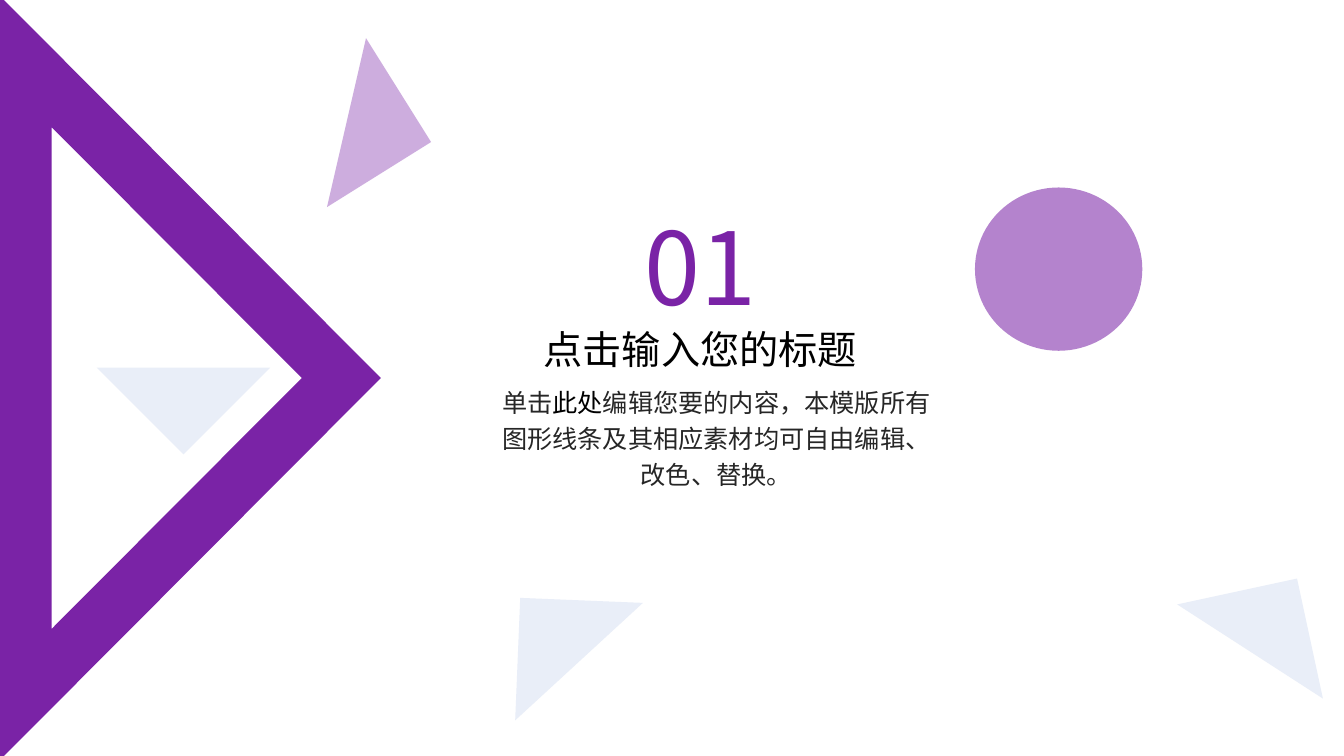
from dataclasses import dataclass
from typing import Optional

import lxml.etree
import pptx
import pptx.dml.color
import pptx.dml.fill
import pptx.enum.shapes
import pptx.enum.text
import pptx.oxml.ns
import pptx.shapes.base
import pptx.slide
import pptx.text.text
import pptx.util

Inches = pptx.util.Inches
Pt = pptx.util.Pt
qn = pptx.oxml.ns.qn


@dataclass(frozen=True)
class Theme:
    font: str = "Noto Sans CJK SC"
    purple: str = "7A23A6"
    indigo: str = "332D91"
    pale: str = "E9EEF8"
    black: str = "000000"
    body: str = "262626"
    number_size: int = 72
    title_size: int = 28
    body_size: int = 18
    outline_width: int = 40


THEME = Theme()


@dataclass(frozen=True)
class Triangle:
    """A triangle that points right before it is turned clockwise about its centre."""
    centre_x: float
    centre_y: float
    rotation: float
    outline: str
    outline_alpha: int = 100
    fill: Optional[str] = None
    fill_alpha: int = 100
    width: float = 0.19
    height: float = 0.38


FRAME = Triangle(1.81, 3.75, 0, THEME.purple, width=3.15, height=6.32)
ACCENTS = [
    Triangle(3.8, 1.3, 13, THEME.purple, 36),
    Triangle(5.49, 6.29, 227.4, THEME.pale, fill=THEME.indigo, fill_alpha=47),
    Triangle(1.82, 4.02, 90, THEME.pale, fill=THEME.purple, fill_alpha=56),
    Triangle(12.6, 6.15, 302.9, THEME.pale, fill=THEME.purple, fill_alpha=56),
]


def paint(fill: pptx.dml.fill.FillFormat, color: str, alpha: int, owner: lxml.etree.ElementBase) -> None:
    """Give a solid colour, with alpha in percent, to the fill held by owner."""
    fill.solid()
    fill.fore_color.rgb = pptx.dml.color.RGBColor.from_string(color)
    if alpha < 100:
        value = owner.find(qn("a:solidFill")).find(qn("a:srgbClr"))
        lxml.etree.SubElement(value, qn("a:alpha"), val=str(alpha * 1000))


def draw_triangle(slide: pptx.slide.Slide, triangle: Triangle) -> None:
    left = triangle.centre_x - triangle.width / 2
    top = triangle.centre_y - triangle.height / 2
    corners = [
        (Inches(left), Inches(top + triangle.height)),
        (Inches(left + triangle.width), Inches(triangle.centre_y)),
    ]
    builder = slide.shapes.build_freeform(Inches(left), Inches(top))
    builder.add_line_segments(corners, close=True)
    shape = builder.convert_to_shape()
    shape.rotation = triangle.rotation
    shape.shadow.inherit = False
    if triangle.fill:
        paint(shape.fill, triangle.fill, triangle.fill_alpha, shape.element.spPr)
    else:
        shape.fill.background()
    shape.line.width = Pt(THEME.outline_width)
    outline = shape.element.spPr.find(qn("a:ln"))
    paint(shape.line.fill, triangle.outline, triangle.outline_alpha, outline)
    lxml.etree.SubElement(outline, qn("a:miter"), lim="800000")


def draw_circle(slide: pptx.slide.Slide) -> None:
    circle = slide.shapes.add_shape(
        pptx.enum.shapes.MSO_SHAPE.OVAL, Inches(9.67), Inches(1.86), Inches(1.66), Inches(1.62)
    )
    circle.shadow.inherit = False
    paint(circle.fill, THEME.purple, 56, circle.element.spPr)
    circle.line.fill.background()


def add_text_frame(
    slide: pptx.slide.Slide, left: float, top: float, width: float, height: float
) -> pptx.text.text.TextFrame:
    box = slide.shapes.add_textbox(Inches(left), Inches(top), Inches(width), Inches(height))
    box.text_frame.word_wrap = True
    box.text_frame.auto_size = pptx.enum.text.MSO_AUTO_SIZE.SHAPE_TO_FIT_TEXT
    return box.text_frame


def style(paragraph: pptx.text.text._Paragraph, size: int, color: str) -> None:
    paragraph.alignment = pptx.enum.text.PP_ALIGN.CENTER
    paragraph.font.size = Pt(size)
    paragraph.font.name = THEME.font
    paragraph.font.color.rgb = pptx.dml.color.RGBColor.from_string(color)
    defaults = paragraph._p.pPr.find(qn("a:defRPr"))
    lxml.etree.SubElement(defaults, qn("a:ea"), typeface=THEME.font)


def write_heading(slide: pptx.slide.Slide) -> None:
    heading = add_text_frame(slide, 5.22, 1.98, 3.45, 1.78)
    number = heading.paragraphs[0]
    number.text = "01"
    style(number, THEME.number_size, THEME.purple)
    title = heading.add_paragraph()
    title.text = "点击输入您的标题"
    style(title, THEME.title_size, THEME.black)


def write_description(slide: pptx.slide.Slide) -> None:
    description = add_text_frame(slide, 4.77, 3.73, 4.67, 1.19).paragraphs[0]
    style(description, THEME.body_size, THEME.body)
    description.line_spacing = 1.2
    description.space_before = Pt(3.6)
    description.add_run().text = "单击"
    emphasis = description.add_run()
    emphasis.text = "此处"
    emphasis.font.color.rgb = pptx.dml.color.RGBColor.from_string(THEME.black)
    description.add_run().text = "编辑您要的内容，本模版所有图形线条及其相应素材均可自由编辑、改色、替换。"


def main() -> None:
    presentation = pptx.Presentation()
    presentation.slide_width = Inches(13.33)
    presentation.slide_height = Inches(7.5)
    slide = presentation.slides.add_slide(presentation.slide_layouts[6])
    draw_triangle(slide, FRAME)
    draw_circle(slide)
    for accent in ACCENTS:
        draw_triangle(slide, accent)
    write_heading(slide)
    write_description(slide)
    presentation.save("out.pptx")


if __name__ == "__main__":
    main()
